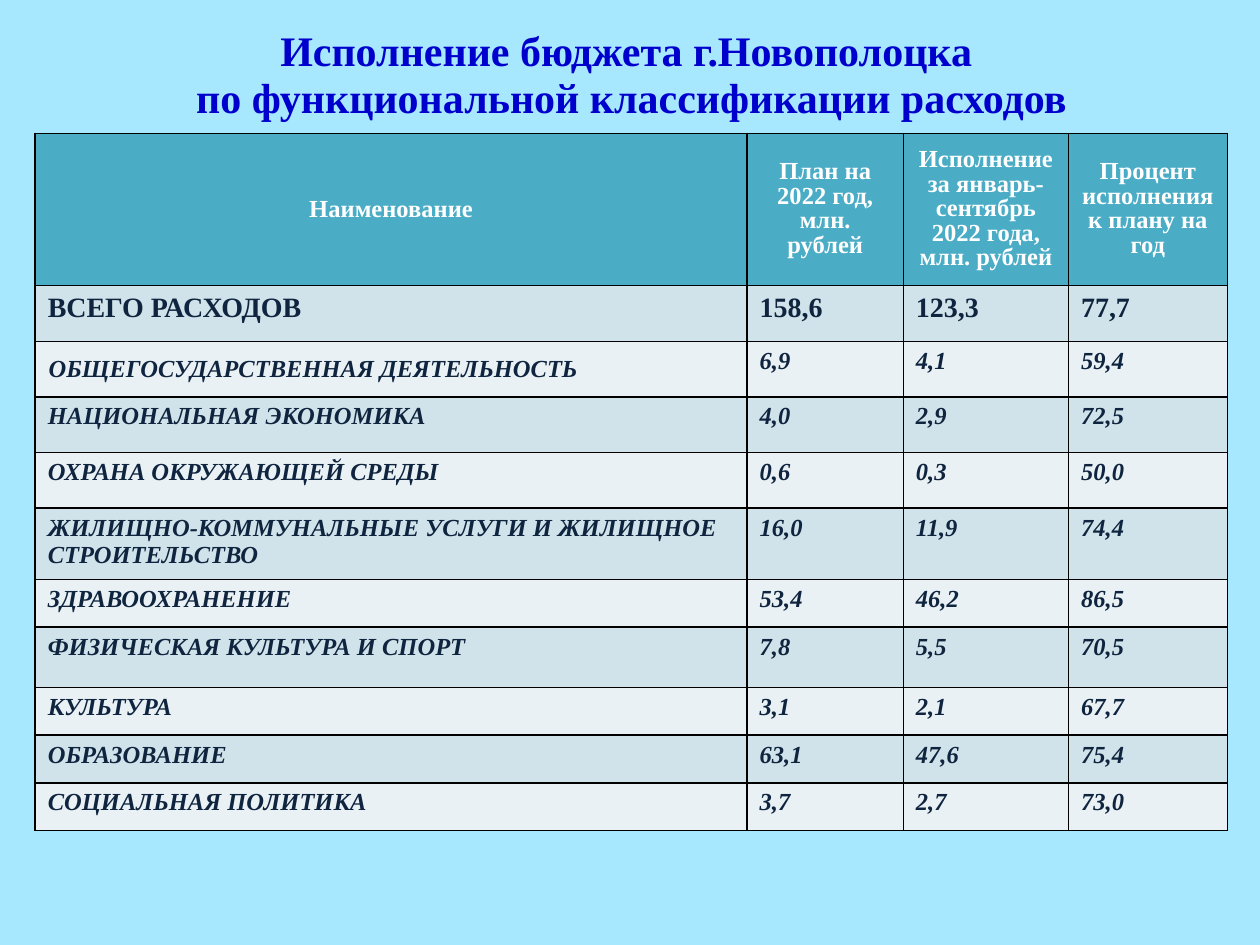
from dataclasses import dataclass

from lxml.etree import SubElement
from pptx import Presentation
from pptx.dml.color import RGBColor as RGB
from pptx.enum.text import MSO_ANCHOR as Anchor, PP_ALIGN as Align
from pptx.oxml.ns import qn
from pptx.util import Cm, Pt


@dataclass(frozen=True)
class Theme:
    font: str = "Times New Roman"
    background: str = "A7E8FF"
    title: str = "0000CC"
    header_fill: str = "4BACC6"
    header_text: str = "FFFFFF"
    bands: tuple = ("D0E3EA", "E9F1F5")
    body_text: str = "0F243E"
    border: str = "000000"
    border_width: int = 1
    title_size: int = 24
    total_size: int = 16
    body_size: int = 14


class BudgetSlide:
    def __init__(self, deck, theme):
        self.theme = theme
        self.slide = deck.slides.add_slide(deck.slide_layouts[6])
        background = self.slide.background.fill
        background.solid()
        background.fore_color.rgb = RGB.from_string(theme.background)

    def set_text(self, frame, text, size, color, italic=False, align=Align.LEFT, leading=None):
        frame.text = text
        frame.word_wrap = True
        for paragraph in frame.paragraphs:
            paragraph.alignment = align
            if leading:
                paragraph.line_spacing = Pt(leading)
            for run in paragraph.runs:
                font = run.font
                font.name, font.size = self.theme.font, Pt(size)
                font.bold, font.italic = True, italic
                font.color.rgb = RGB.from_string(color)

    def title(self, text, left, top, width, height):
        frame = self.slide.shapes.add_textbox(Cm(left), Cm(top), Cm(width), Cm(height)).text_frame
        self.set_text(frame, text, self.theme.title_size, self.theme.title,
                      align=Align.CENTER, leading=27)
        frame.vertical_anchor = Anchor.MIDDLE

    def border(self, cell):
        properties = cell._tc.get_or_add_tcPr()
        for position, side in enumerate(("lnL", "lnR", "lnT", "lnB")):
            line = SubElement(properties, qn(f"a:{side}"), w=str(Pt(self.theme.border_width)))
            fill = SubElement(line, qn("a:solidFill"))
            SubElement(fill, qn("a:srgbClr"), val=self.theme.border)
            properties.insert(position, line)

    def cell(self, cell, text, fill, size, color, **style):
        self.set_text(cell.text_frame, text, size, color, **style)
        cell.fill.solid()
        cell.fill.fore_color.rgb = RGB.from_string(fill)
        self.border(cell)

    def table(self, header, rows, left, top, widths, heights):
        theme = self.theme
        table = self.slide.shapes.add_table(
            len(rows) + 1, len(header), Cm(left), Cm(top),
            Cm(sum(widths)), Cm(sum(heights))).table
        for column, width in zip(table.columns, widths):
            column.width = Cm(width)
        for row, height in zip(table.rows, heights):
            row.height = Cm(height)

        # Header row
        for column, heading in enumerate(header):
            cell = table.cell(0, column)
            self.cell(cell, heading, theme.header_fill, theme.body_size, theme.header_text,
                      align=Align.CENTER, leading=14 if column else None)
            cell.vertical_anchor = Anchor.MIDDLE

        # Total first, then the spending items in italics
        for index, row in enumerate(rows):
            is_total = index == 0
            size = theme.total_size if is_total else theme.body_size
            for column, text in enumerate(row):
                self.cell(table.cell(index + 1, column), text, theme.bands[index % 2],
                          size, theme.body_text, italic=not is_total)
        return table


TITLE = "Исполнение бюджета г.Новополоцка \vпо функциональной классификации расходов"
HEADER = (
    "Наименование",
    "План на 2022 год, млн. рублей",
    "Исполнение за январь-сентябрь 2022 года, млн. рублей",
    "Процент исполнения к плану на год",
)
SPENDING = (
    ("ВСЕГО РАСХОДОВ", "158,6", "123,3", "77,7"),
    ("ОБЩЕГОСУДАРСТВЕННАЯ ДЕЯТЕЛЬНОСТЬ", "6,9", "4,1", "59,4"),
    ("НАЦИОНАЛЬНАЯ ЭКОНОМИКА", "4,0", "2,9", "72,5"),
    ("ОХРАНА ОКРУЖАЮЩЕЙ СРЕДЫ", "0,6", "0,3", "50,0"),
    ("ЖИЛИЩНО-КОММУНАЛЬНЫЕ УСЛУГИ И ЖИЛИЩНОЕ СТРОИТЕЛЬСТВО", "16,0", "11,9", "74,4"),
    ("ЗДРАВООХРАНЕНИЕ", "53,4", "46,2", "86,5"),
    ("ФИЗИЧЕСКАЯ КУЛЬТУРА И СПОРТ", "7,8", "5,5", "70,5"),
    ("КУЛЬТУРА", "3,1", "2,1", "67,7"),
    ("ОБРАЗОВАНИЕ", "63,1", "47,6", "75,4"),
    ("СОЦИАЛЬНАЯ ПОЛИТИКА", "3,7", "2,7", "73,0"),
)
COLUMN_WIDTHS = (14.35, 3.15, 3.33, 3.2)
ROW_HEIGHTS = (3.07, *[1.12] * 5, 0.96, 1.22, *[0.96] * 3)


def main():
    deck = Presentation()
    deck.slide_width, deck.slide_height = Cm(25.4), Cm(19.05)
    budget = BudgetSlide(deck, Theme())

    # Title
    budget.title(TITLE, 1.3, 0.33, 22.86, 2.36)

    # Spending table
    spending = budget.table(HEADER, SPENDING, 0.71, 2.69, COLUMN_WIDTHS, ROW_HEIGHTS)

    # The state activity label sits mid-row with tight margins
    state_activity = spending.cell(2, 0)
    state_activity.vertical_anchor = Anchor.MIDDLE
    state_activity.margin_left = Cm(0.27)
    state_activity.margin_top = state_activity.margin_right = Cm(0.02)
    state_activity.margin_bottom = 0

    deck.save("out.pptx")


if __name__ == "__main__":
    main()
